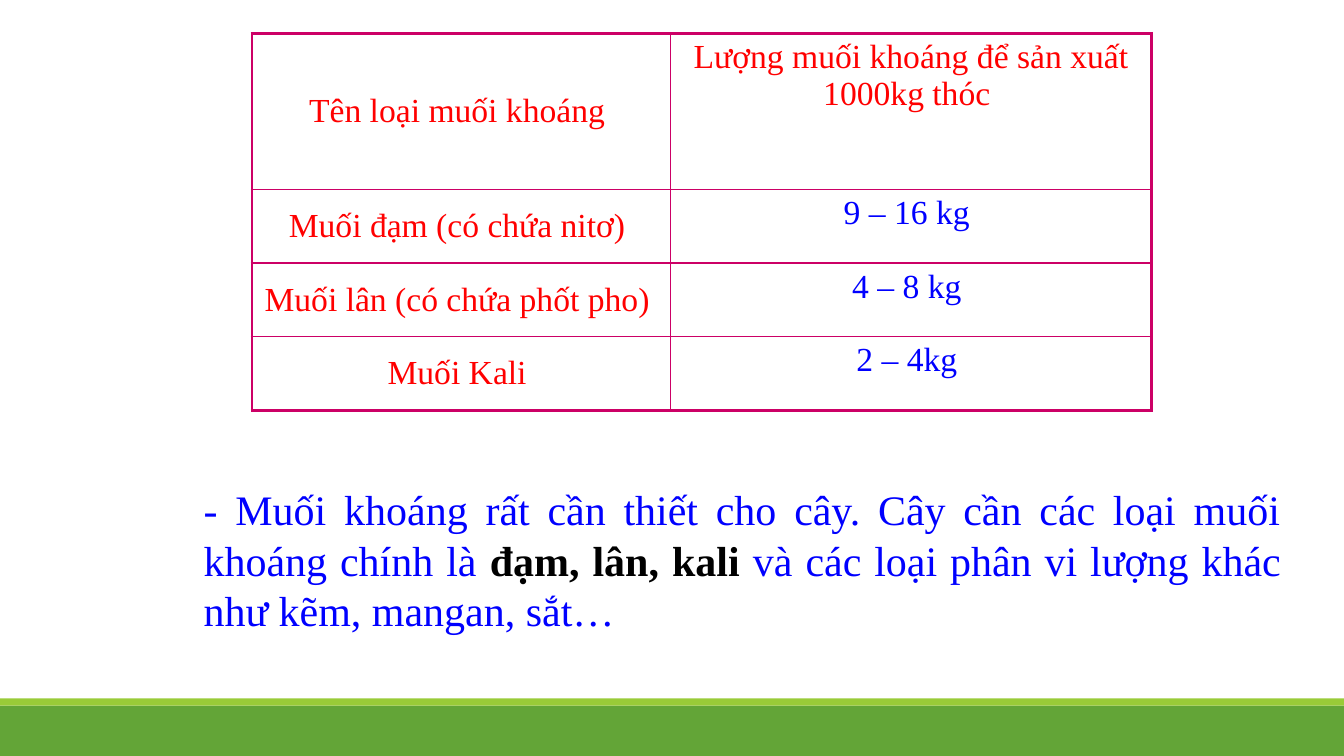
from dataclasses import dataclass

from lxml.etree import SubElement
from pptx import Presentation
from pptx.dml.color import RGBColor
from pptx.enum.shapes import MSO_SHAPE
from pptx.enum.text import MSO_ANCHOR, PP_ALIGN
from pptx.oxml.ns import qn
from pptx.slide import Slide
from pptx.table import _Cell
from pptx.util import Inches, Pt

COLORS = {
    "green": "63A537",
    "lime": "99CB38",
    "border": "CC0066",
    "red": "FF0000",
    "blue": "0000FF",
    "black": "000000",
}
FONT = "Times New Roman"
OUTER_BORDER, INNER_BORDER = 2.25, 1


@dataclass
class Band:
    top: float
    height: float
    color: str


@dataclass
class Salt:
    name: str
    amount: str
    amount_color: str
    height: float


@dataclass
class Phrase:
    text: str
    color: str
    bold: bool


BANDS = [Band(7, 0.5, "green"), Band(6.93, 0.07, "lime")]
SALTS = [
    Salt("Tên loại muối khoáng ", "Lượng muối khoáng để sản xuất 1000kg thóc ", "red", 1.55),
    Salt("Muối đạm (có chứa nitơ) ", "9 – 16 kg ", "blue", 0.73),
    Salt("Muối lân (có chứa phốt pho) ", "4 – 8 kg ", "blue", 0.73),
    Salt("Muối Kali ", "2 – 4kg ", "blue", 0.73),
]
COLUMN_WIDTHS = [4.15, 4.77]
CONCLUSION = [
    Phrase("- Muối khoáng rất cần thiết cho cây. Cây cần các loại muối khoáng chính là ", "blue", False),
    Phrase("đạm, lân, kali ", "black", True),
    Phrase("và các loại phân vi lượng khác như kẽm, mangan, sắt…", "blue", False),
]


def rgb(name: str) -> RGBColor:
    return RGBColor.from_string(COLORS[name])


def draw_band(slide: Slide, band: Band) -> None:
    strip = slide.shapes.add_shape(
        MSO_SHAPE.RECTANGLE, 0, Inches(band.top), Inches(13.33), Inches(band.height))
    strip.shadow.inherit = False
    strip.fill.solid()
    strip.fill.fore_color.rgb = rgb(band.color)
    strip.line.fill.background()


def set_borders(cell: _Cell, outer_sides: dict[str, bool]) -> None:
    properties = cell._tc.get_or_add_tcPr()
    for side, is_outer in outer_sides.items():
        width = Pt(OUTER_BORDER if is_outer else INNER_BORDER)
        line = SubElement(properties, qn(f"a:{side}"), w=str(width))
        fill = SubElement(line, qn("a:solidFill"))
        SubElement(fill, qn("a:srgbClr"), val=COLORS["border"])


def fill_cell(cell: _Cell, text: str, color: str, anchor: MSO_ANCHOR) -> None:
    cell.text = text
    cell.vertical_anchor = anchor
    paragraph = cell.text_frame.paragraphs[0]
    paragraph.alignment = PP_ALIGN.CENTER
    paragraph.space_before = Pt(4.8)
    paragraph.font.name = FONT
    paragraph.font.size = Pt(24)
    paragraph.font.bold = False
    paragraph.font.color.rgb = rgb(color)


def draw_salt_table(slide: Slide) -> None:
    table = slide.shapes.add_table(
        len(SALTS), len(COLUMN_WIDTHS), Inches(2.5), Inches(0.33),
        Inches(sum(COLUMN_WIDTHS)), Inches(sum(salt.height for salt in SALTS))).table
    table.first_row = table.horz_banding = False
    for column, width in zip(table.columns, COLUMN_WIDTHS):
        column.width = Inches(width)
    for r, salt in enumerate(SALTS):
        table.rows[r].height = Inches(salt.height)
        fill_cell(table.cell(r, 0), salt.name, "red", MSO_ANCHOR.MIDDLE)
        fill_cell(table.cell(r, 1), salt.amount, salt.amount_color, MSO_ANCHOR.TOP)
        for c in range(len(COLUMN_WIDTHS)):
            cell = table.cell(r, c)
            set_borders(cell, {
                "lnL": c == 0,
                "lnR": c == len(COLUMN_WIDTHS) - 1,
                "lnT": r == 0,
                "lnB": r == len(SALTS) - 1,
            })
            cell.fill.background()


def draw_conclusion(slide: Slide) -> None:
    frame = slide.shapes.add_textbox(
        Inches(1.92), Inches(4.75), Inches(10.89), Inches(1.6)).text_frame
    frame.word_wrap = True
    frame.vertical_anchor = MSO_ANCHOR.MIDDLE
    paragraph = frame.paragraphs[0]
    paragraph.alignment = PP_ALIGN.JUSTIFY
    paragraph.line_spacing = Pt(36)
    paragraph.font.name = FONT
    paragraph.font.size = Pt(30)
    for phrase in CONCLUSION:
        run = paragraph.add_run()
        run.text = phrase.text
        run.font.bold = phrase.bold
        run.font.color.rgb = rgb(phrase.color)


def main() -> None:
    deck = Presentation()
    deck.slide_width, deck.slide_height = Inches(13.33), Inches(7.5)
    slide = deck.slides.add_slide(deck.slide_layouts[6])

    # Green bands along the foot
    for band in BANDS:
        draw_band(slide, band)

    # Conclusion below the table
    draw_conclusion(slide)

    # Mineral salts needed per 1000 kg of rice
    draw_salt_table(slide)

    deck.save("out.pptx")


if __name__ == "__main__":
    main()
